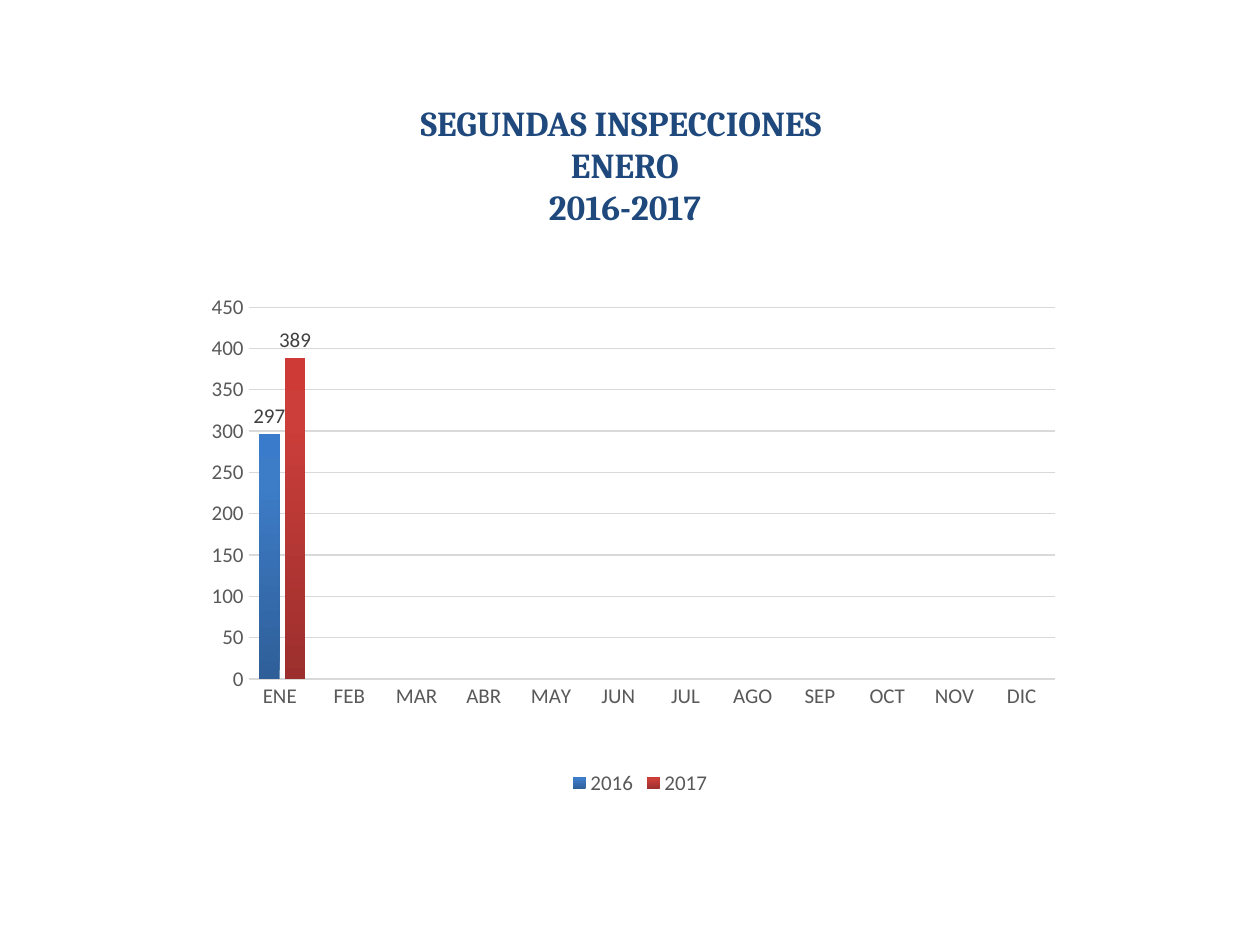
from dataclasses import dataclass

from lxml import etree
from pptx import Presentation
from pptx.chart.data import CategoryChartData
from pptx.dml.color import RGBColor
from pptx.enum.chart import XL_CHART_TYPE, XL_LABEL_POSITION, XL_LEGEND_POSITION, XL_TICK_MARK
from pptx.enum.text import MSO_ANCHOR, MSO_AUTO_SIZE, PP_ALIGN
from pptx.oxml import parse_xml
from pptx.oxml.ns import nsdecls, qn
from pptx.util import Inches, Pt

COLUMNS = XL_CHART_TYPE.COLUMN_CLUSTERED
OUTSIDE_END = XL_LABEL_POSITION.OUTSIDE_END
LEGEND_BOTTOM = XL_LEGEND_POSITION.BOTTOM
NO_TICK = XL_TICK_MARK.NONE
TOP = MSO_ANCHOR.TOP
FIT_SHAPE = MSO_AUTO_SIZE.SHAPE_TO_FIT_TEXT
CENTER = PP_ALIGN.CENTER

SLIDE_WIDTH, SLIDE_HEIGHT = Inches(10), Inches(7.5)
NAVY, GRAY, DARK_GRAY, GRID_GRAY = "1F497D", "595959", "404040", "D9D9D9"
MONTHS = ["ENE ", "FEB", "MAR", "ABR", "MAY", "JUN",
          "JUL", "AGO", "SEP", "OCT", "NOV", "DIC"]
PLOT_AREA = {"x": 0.089, "y": 0.046, "w": 0.847, "h": 0.719}  # shares of the chart


@dataclass
class Year:
    name: str
    january: int
    gradient: dict[int, str]  # percent from the bottom -> colour


YEARS = [
    Year("2016", 297, {0: "2F5F99", 80: "3D7CC7", 100: "3A7CCB"}),
    Year("2017", 389, {0: "9C2F2D", 80: "CB3E3A", 100: "CE3B37"}),
]


def color(hex_code: str) -> RGBColor:
    return RGBColor.from_string(hex_code)


def format_font(font, size: float, hex_code: str, name: str = "Calibri", bold: bool = False) -> None:
    font.size, font.name, font.bold = Pt(size), name, bold
    font.color.rgb = color(hex_code)


def place(shape, left: float, top: float, width: float, height: float) -> None:
    """Set the position in shares of the slide's size."""
    shape.left, shape.width = int(left * SLIDE_WIDTH), int(width * SLIDE_WIDTH)
    shape.top, shape.height = int(top * SLIDE_HEIGHT), int(height * SLIDE_HEIGHT)


def write_lines(frame, lines: list[str], **font_format) -> None:
    frame.text = "\n".join(lines)
    for paragraph in frame.paragraphs:
        paragraph.alignment = CENTER
        for run in paragraph.runs:
            format_font(run.font, **font_format)


def fill_gradient(series, stops: dict[int, str]) -> None:
    """Fill the columns with a gradient that rises from the bottom."""
    stop_xml = "".join(f'<a:gs pos="{percent * 1000}"><a:srgbClr val="{code}"/></a:gs>'
                       for percent, code in stops.items())
    properties = series.format.fill._xPr
    properties.insert(0, parse_xml(
        f'<a:gradFill {nsdecls("a")} rotWithShape="1"><a:gsLst>{stop_xml}</a:gsLst>'
        '<a:lin ang="16200000" scaled="0"/></a:gradFill>'))


def set_plot_area(chart, shares: dict[str, float]) -> None:
    """Fix the inner plot area, without the axis labels."""
    plot_area = chart._chartSpace.chart.plotArea
    for old_layout in plot_area.findall(qn("c:layout")):
        plot_area.remove(old_layout)
    layout = etree.Element(qn("c:layout"))
    manual = etree.SubElement(layout, qn("c:manualLayout"))
    settings = {"layoutTarget": "inner", "xMode": "edge", "yMode": "edge", **shares}
    for tag, value in settings.items():
        etree.SubElement(manual, qn(f"c:{tag}")).set("val", str(value))
    plot_area.insert(0, layout)


def style_axes(chart) -> None:
    for axis in (chart.category_axis, chart.value_axis):
        axis.major_tick_mark = axis.minor_tick_mark = NO_TICK
        format_font(axis.tick_labels.font, 12, GRAY)
    month_line = chart.category_axis.format.line
    month_line.color.rgb, month_line.width = color(GRID_GRAY), Pt(1)
    counts = chart.value_axis
    counts.minimum_scale, counts.maximum_scale, counts.major_unit = 0, 450, 50
    counts.format.line.fill.background()
    counts.has_major_gridlines = True
    grid_line = counts.major_gridlines.format.line
    grid_line.color.rgb, grid_line.width = color(GRID_GRAY), Pt(0.75)


def add_inspections_chart(slide) -> None:
    inspections = CategoryChartData()
    inspections.categories = MONTHS
    for year in YEARS:
        inspections.add_series(year.name, [year.january] + [None] * (len(MONTHS) - 1))
    frame = slide.shapes.add_chart(COLUMNS, 0, 0, 0, 0, inspections)
    place(frame, 0.13, 0.3, 0.756, 0.547)

    chart = frame.chart
    format_font(chart.font, 10, "000000")
    chart.has_title = False
    chart.has_legend = True
    chart.legend.position, chart.legend.include_in_layout = LEGEND_BOTTOM, False
    format_font(chart.legend.font, 12, GRAY)
    set_plot_area(chart, PLOT_AREA)
    style_axes(chart)

    plot = chart.plots[0]
    plot.gap_width, plot.overlap, plot.vary_by_categories = 100, -24, False
    for series, year in zip(plot.series, YEARS):
        fill_gradient(series, year.gradient)
        labels = series.data_labels
        labels.show_value, labels.position = True, OUTSIDE_END
        format_font(labels.font, 12, DARK_GRAY)


def main() -> None:
    presentation = Presentation()
    presentation.slide_width, presentation.slide_height = SLIDE_WIDTH, SLIDE_HEIGHT
    slide = presentation.slides.add_slide(presentation.slide_layouts.get_by_name("Title Only"))

    title = slide.shapes.title
    place(title, 0.13, 0.101, 0.732, 0.148)
    title.text_frame.vertical_anchor, title.text_frame.auto_size = TOP, FIT_SHAPE
    write_lines(title.text_frame, ["SEGUNDAS INSPECCIONES ", "ENERO", "2016-2017"],
                size=20, hex_code=NAVY, name="Cambria", bold=True)

    add_inspections_chart(slide)
    presentation.save("out.pptx")


if __name__ == "__main__":
    main()
